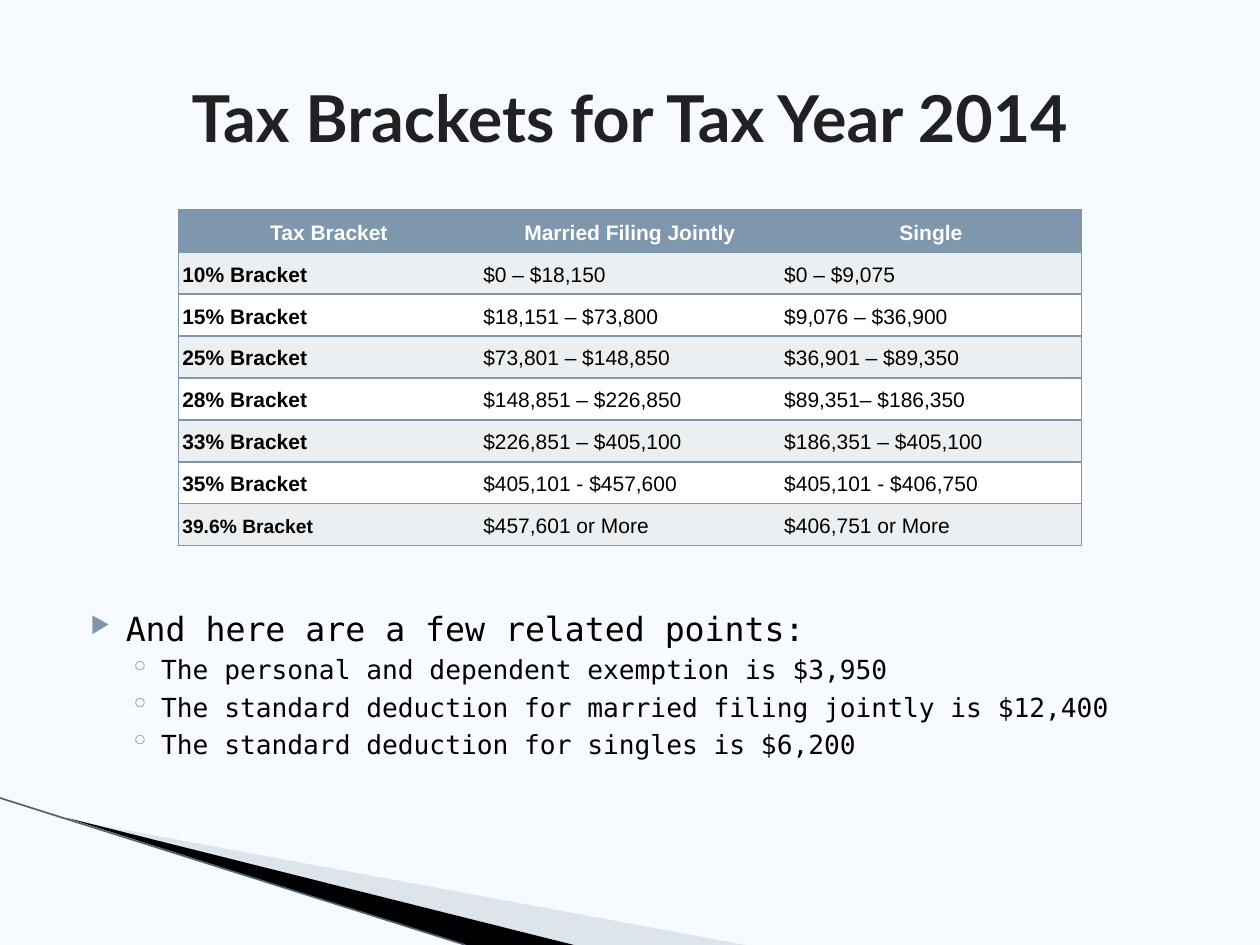
from dataclasses import dataclass

from lxml import etree
from pptx import Presentation
from pptx.dml.color import RGBColor
from pptx.enum.shapes import MSO_CONNECTOR
from pptx.enum.text import MSO_ANCHOR, PP_ALIGN
from pptx.oxml.ns import qn
from pptx.util import Pt

STRAIGHT = MSO_CONNECTOR.STRAIGHT
MIDDLE = MSO_ANCHOR.MIDDLE
CENTER, LEFT = PP_ALIGN.CENTER, PP_ALIGN.LEFT


@dataclass(frozen=True)
class Theme:
    background: str = "F7FBFF"
    accent: str = "7E97AD"
    band: str = "ECEFF1"
    white: str = "FFFFFF"
    black: str = "000000"
    title: str = "1F2123"
    pale_wedge: str = "B7C4D0"
    edge: str = "4F6274"
    title_font: str = "Lato"
    table_font: str = "Arial"
    body_font: str = "DejaVu Sans Mono"
    title_size: float = 36.9
    table_size: float = 12
    small_size: float = 11
    lead_size: float = 19
    point_size: float = 15


THEME = Theme()

BRACKETS = [
    ("Tax Bracket", "Married Filing Jointly", "Single"),
    ("10% Bracket", "$0 – $18,150", "$0 – $9,075"),
    ("15% Bracket", "$18,151 – $73,800", "$9,076 – $36,900"),
    ("25% Bracket", "$73,801 – $148,850", "$36,901 – $89,350"),
    ("28% Bracket", "$148,851 – $226,850", "$89,351– $186,350"),
    ("33% Bracket", "$226,851 – $405,100", "$186,351 – $405,100"),
    ("35% Bracket", "$405,101 - $457,600", "$405,101 - $406,750"),
    ("39.6% Bracket", "$457,601 or More", "$406,751 or More"),
]
LEAD = "And here are a few related points:"
POINTS = [
    "The personal and dependent exemption is $3,950",
    "The standard deduction for married filing jointly is $12,400",
    "The standard deduction for singles is $6,200",
]


def rgb(color):
    return RGBColor.from_string(color)


def style(paragraph, font, size, color, bold=False):
    for run in paragraph.runs:
        run.font.name = font
        run.font.size = Pt(size)
        run.font.color.rgb = rgb(color)
        run.font.bold = bold


def add_wedge(slide, left, top, points, color, alpha=None):
    start, *rest = [(Pt(left + x), Pt(top + y)) for x, y in points]
    builder = slide.shapes.build_freeform(*start, scale=1.0)
    builder.add_line_segments(rest, close=True)
    wedge = builder.convert_to_shape()
    wedge.shadow.inherit = False
    wedge.fill.solid()
    wedge.fill.fore_color.rgb = rgb(color)
    wedge.line.fill.background()
    if alpha is not None:
        fill_color = wedge.fill._xPr.find(qn("a:solidFill"))[0]
        etree.SubElement(fill_color, qn("a:alpha"), val=str(alpha * 1000))


def add_corner(slide, left, top, width, height):
    """Wedges and edge line in the lower left corner."""
    bottom = height
    add_wedge(slide, left, top, [(39.6, 12.4), (width, bottom), (328, bottom)],
              THEME.pale_wedge, alpha=40)
    add_wedge(slide, left, top, [(38, 11.3), (328, bottom), (266, bottom)],
              THEME.black)
    edge = slide.shapes.add_connector(
        STRAIGHT, Pt(left), Pt(top), Pt(left + 266), Pt(top + height))
    edge.line.color.rgb = rgb(THEME.edge)
    edge.line.width = Pt(0.95)
    etree.SubElement(edge._element.spPr, qn("a:effectLst"))


def add_title(slide, left, top, width, height):
    frame = slide.shapes.add_textbox(
        Pt(left), Pt(top), Pt(width), Pt(height)).text_frame
    frame.word_wrap = True
    frame.vertical_anchor = MIDDLE
    frame.text = "Tax Brackets for Tax Year 2014"
    heading = frame.paragraphs[0]
    heading.alignment = CENTER
    style(heading, THEME.title_font, THEME.title_size, THEME.title, bold=True)


def add_borders(cell, sides):
    """Draw the table's rule on some sides of a cell, and none on the rest."""
    properties = cell._tc.get_or_add_tcPr()
    for side in "LRTB":
        border = etree.SubElement(properties, qn(f"a:ln{side}"), w=str(Pt(1)))
        if side in sides:
            fill = etree.SubElement(border, qn("a:solidFill"))
            etree.SubElement(fill, qn("a:srgbClr"), val=THEME.accent)
        else:
            etree.SubElement(border, qn("a:noFill"))


def add_brackets(slide, left, top, width, height):
    """Table of brackets: coloured header, banded rows, bold first column."""
    row_count, column_count = len(BRACKETS), len(BRACKETS[0])
    table = slide.shapes.add_table(
        row_count, column_count, Pt(left), Pt(top), Pt(width), Pt(height)).table
    for column in table.columns:
        column.width = Pt(width / column_count)
    for r, texts in enumerate(BRACKETS):
        table.rows[r].height = Pt(height / row_count)
        header = r == 0
        fill = THEME.accent if header else THEME.band if r % 2 else THEME.white
        for c, text in enumerate(texts):
            cell = table.cell(r, c)
            cell.margin_left = cell.margin_right = Pt(2.2)
            cell.margin_top = cell.margin_bottom = Pt(2.2)
            cell.vertical_anchor = MIDDLE
            sides = "TB" + ("L" if c == 0 else "")
            sides += "R" if c == column_count - 1 else ""
            add_borders(cell, sides)
            cell.fill.solid()
            cell.fill.fore_color.rgb = rgb(fill)
            cell.text_frame.text = text
            paragraph = cell.text_frame.paragraphs[0]
            paragraph.alignment = CENTER if header else LEFT
            paragraph.line_spacing = 1.15
            last_label = r == row_count - 1 and c == 0
            style(paragraph, THEME.table_font,
                  THEME.small_size if last_label else THEME.table_size,
                  THEME.white if header else THEME.black,
                  bold=header or c == 0)


def add_bullet(paragraph, symbol, margin, hanging, percent):
    properties = paragraph._p.get_or_add_pPr()
    properties.set("marL", str(Pt(margin)))
    properties.set("indent", str(Pt(-hanging)))
    color = etree.SubElement(properties, qn("a:buClr"))
    etree.SubElement(color, qn("a:srgbClr"), val=THEME.accent)
    etree.SubElement(properties, qn("a:buSzPct"), val=str(percent * 1000))
    etree.SubElement(properties, qn("a:buChar"), char=symbol)


def add_points(slide, left, top, width, height):
    """Lead line with its related points."""
    frame = slide.shapes.add_textbox(
        Pt(left), Pt(top), Pt(width), Pt(height)).text_frame
    frame.word_wrap = True
    frame.text = "\n".join([LEAD, *POINTS])
    lead, *points = frame.paragraphs
    add_bullet(lead, "▶", 28.8, 20.2, 68)
    style(lead, THEME.body_font, THEME.lead_size, THEME.black)
    for point in points:
        point.level = 1
        add_bullet(point, "◦", 49, 18, 100)
        point.space_before = Pt(3.2)
        style(point, THEME.body_font, THEME.point_size, THEME.black)


def main():
    deck = Presentation()
    deck.slide_width, deck.slide_height = Pt(720), Pt(540)
    slide = deck.slides.add_slide(deck.slide_layouts[6])
    slide.background.fill.solid()
    slide.background.fill.fore_color.rgb = rgb(THEME.background)

    add_corner(slide, 0, 456, 426, 84)
    add_points(slide, 36, 344, 648, 128)
    add_title(slide, 36, 21.6, 648, 90)
    add_brackets(slide, 102, 120, 516, 192)
    deck.save("out.pptx")


if __name__ == "__main__":
    main()
